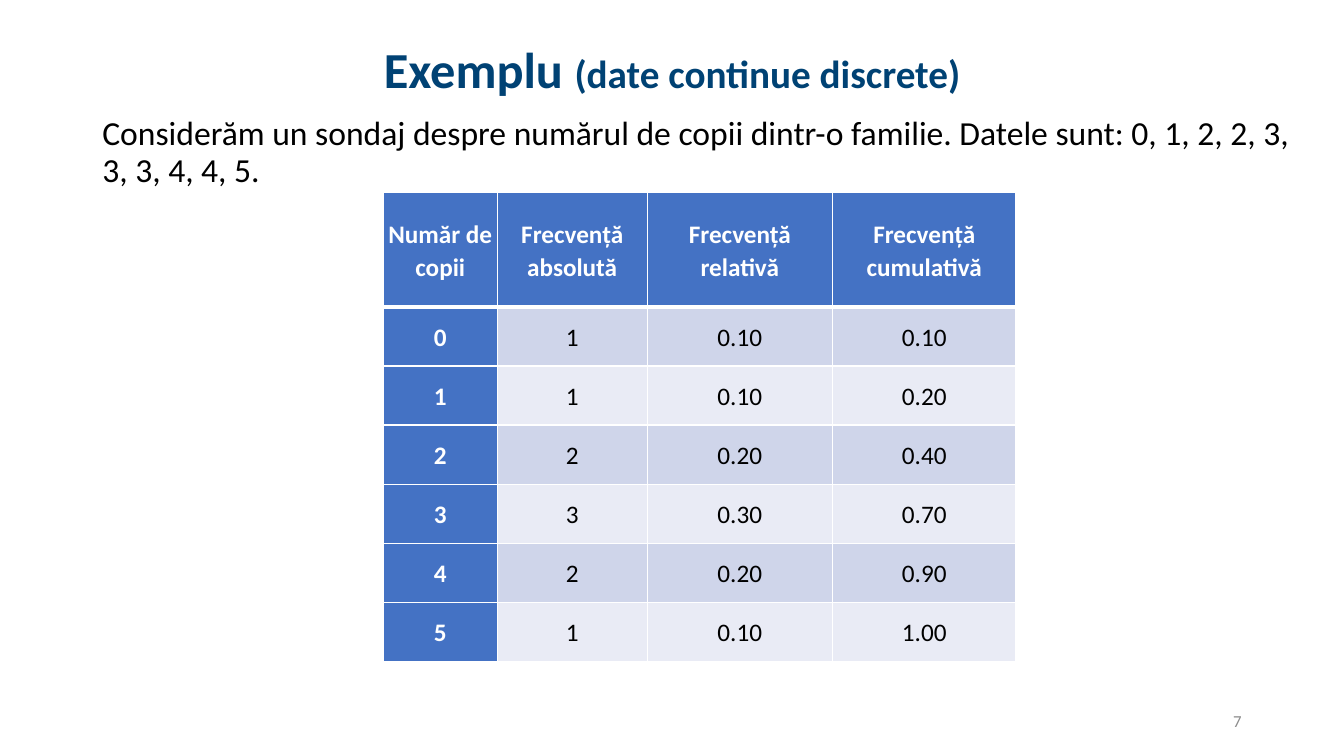
from collections import Counter

from lxml.etree import SubElement
from pptx import Presentation
from pptx.dml.color import RGBColor
from pptx.enum.text import MSO_ANCHOR, MSO_AUTO_SIZE, PP_ALIGN
from pptx.oxml.ns import qn
from pptx.util import Pt

NAVY = RGBColor(0x00, 0x42, 0x74)
BLACK = RGBColor(0x00, 0x00, 0x00)
WHITE = RGBColor(0xFF, 0xFF, 0xFF)
GRAY = RGBColor(0x8C, 0x8C, 0x8C)
BLUE = RGBColor(0x44, 0x72, 0xC4)
BANDS = (RGBColor(0xCF, 0xD5, 0xEA), RGBColor(0xE9, 0xEB, 0xF5))
FONT = "Calibri"

ANSWERS = [0, 1, 2, 2, 3, 3, 3, 4, 4, 5]
HEADINGS = ["Număr de copii", "Frecvență absolută", "Frecvență relativă", "Frecvență cumulativă"]
COLUMN_WIDTHS = [81.5, 107, 132.5, 131]
HEADER_HEIGHT = 81.5
ROW_HEIGHT = 42.2


def format_span(span, size, color, bold=False):
    """Apply the font, size, colour and weight to a run."""
    span.font.name = FONT
    span.font.size = Pt(size)
    span.font.color.rgb = color
    span.font.bold = bold


def place(shape, left, top, width, height):
    """Move and size a shape, in points."""
    shape.left, shape.top, shape.width, shape.height = map(Pt, (left, top, width, height))


def add_title(page, main_part, detail):
    """Fill the title placeholder with a large and a smaller part."""
    title = page.shapes.title
    place(title, 66, 23, 828, 57.5)
    frame = title.text_frame
    frame.auto_size = MSO_AUTO_SIZE.NONE
    frame.vertical_anchor = MSO_ANCHOR.MIDDLE
    para = frame.paragraphs[0]
    para.alignment = PP_ALIGN.CENTER
    para.line_spacing = 0.9
    for text, size in ((main_part, 36), (detail, 28)):
        span = para.add_run()
        span.text = text
        format_span(span, size, NAVY, True)


def add_text(page, bounds, text, size, color, alignment, anchor, spacing=1.0):
    """Add a wrapping text box with one paragraph."""
    box = page.shapes.add_textbox(*map(Pt, bounds))
    frame = box.text_frame
    frame.word_wrap = True
    frame.vertical_anchor = anchor
    frame.text = text
    para = frame.paragraphs[0]
    para.alignment = alignment
    para.line_spacing = spacing
    format_span(para.runs[0], size, color)


def set_borders(cell, top, bottom):
    """Draw white cell borders with the given top and bottom widths."""
    properties = cell._tc.get_or_add_tcPr()
    widths = {"a:lnL": 1, "a:lnR": 1, "a:lnT": top, "a:lnB": bottom}
    for index, (tag, width) in enumerate(widths.items()):
        line = SubElement(properties, qn(tag), w=str(Pt(width)))
        fill = SubElement(line, qn("a:solidFill"))
        SubElement(fill, qn("a:srgbClr"), val=str(WHITE))
        properties.insert(index, line)


def fill_cell(cell, text, fill, color, bold):
    """Write centred text in a coloured cell."""
    cell.fill.solid()
    cell.fill.fore_color.rgb = fill
    cell.vertical_anchor = MSO_ANCHOR.MIDDLE
    cell.margin_left = cell.margin_right = cell.margin_top = cell.margin_bottom = Pt(0.7)
    cell.text_frame.text = text
    para = cell.text_frame.paragraphs[0]
    para.alignment = PP_ALIGN.CENTER
    para.line_spacing = 1.07
    para.space_after = Pt(8)
    format_span(para.runs[0], 18, color, bold)


def frequency_rows(answers):
    """Return value, absolute, relative and cumulative frequency as text."""
    rows = []
    running = 0
    for value, count in sorted(Counter(answers).items()):
        running += count
        shares = [f"{part / len(answers):.2f}" for part in (count, running)]
        rows.append([str(value), str(count), *shares])
    return rows


def add_frequency_table(page, left, top):
    """Add the frequency table with a header row and a header column."""
    rows = [HEADINGS, *frequency_rows(ANSWERS)]
    heights = [HEADER_HEIGHT] + [ROW_HEIGHT] * (len(rows) - 1)
    bounds = map(Pt, (left, top, sum(COLUMN_WIDTHS), sum(heights)))
    table = page.shapes.add_table(len(rows), len(HEADINGS), *bounds).table
    table.first_col = True
    for column, width in zip(table.columns, COLUMN_WIDTHS):
        column.width = Pt(width)
    for row_index, (texts, height) in enumerate(zip(rows, heights)):
        table.rows[row_index].height = Pt(height)
        for column_index, text in enumerate(texts):
            cell = table.cell(row_index, column_index)
            heading = row_index == 0 or column_index == 0
            fill = BLUE if heading else BANDS[(row_index - 1) % 2]
            fill_cell(cell, text, fill, WHITE if heading else BLACK, heading)
            set_borders(cell, 3 if row_index == 1 else 1, 3 if row_index == 0 else 1)


def main():
    """Build the slide and save the deck."""
    deck = Presentation()
    deck.slide_width, deck.slide_height = Pt(960), Pt(540)
    page = deck.slides.add_slide(deck.slide_layouts[5])
    add_title(page, "Exemplu ", "(date continue discrete)")
    data = ", ".join(map(str, ANSWERS))
    question = f"Considerăm un sondaj despre numărul de copii dintr-o familie. Datele sunt: {data}."
    add_text(page, (66, 80, 873.5, 56), question, 24, BLACK, PP_ALIGN.LEFT, MSO_ANCHOR.TOP, 0.9)
    add_text(page, (678, 500.5, 216, 28.75), "7", 12, GRAY, PP_ALIGN.RIGHT, MSO_ANCHOR.MIDDLE)
    add_frequency_table(page, 273.75, 137.75)
    deck.save("out.pptx")


if __name__ == "__main__":
    main()
